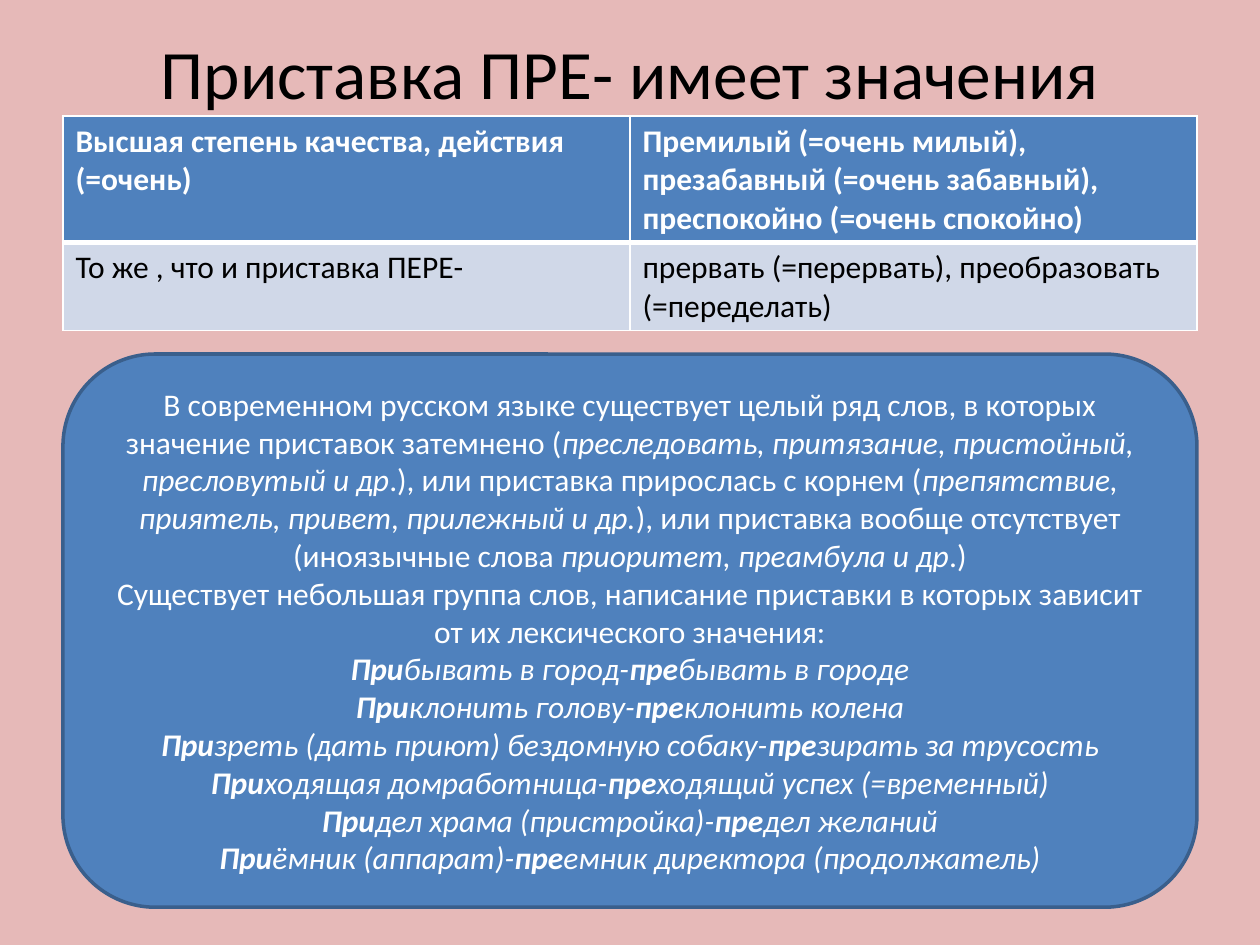
from dataclasses import dataclass

from lxml import etree
from pptx import Presentation
from pptx.dml.color import RGBColor
from pptx.enum.shapes import MSO_SHAPE
from pptx.enum.text import MSO_ANCHOR, PP_ALIGN
from pptx.oxml.ns import qn
from pptx.util import Inches, Pt

ROUNDED = MSO_SHAPE.ROUNDED_RECTANGLE
MIDDLE = MSO_ANCHOR.MIDDLE
CENTER = PP_ALIGN.CENTER


@dataclass(frozen=True)
class Theme:
    """Colours, font and type sizes of the slide."""
    background: str = "E6B9B8"
    accent: str = "4F81BD"
    accent_dark: str = "3A5F8C"
    band: str = "D0D8E8"
    light: str = "FFFFFF"
    dark: str = "000000"
    font: str = "Calibri"
    title_size: float = 39.6
    body_size: float = 18


THEME = Theme()

TITLE = "Приставка ПРЕ- имеет значения"
MEANINGS = [
    ("Высшая степень качества, действия (=очень)",
     "Премилый (=очень милый), презабавный (=очень забавный), "
     "преспокойно (=очень спокойно)"),
    ("То же , что и приставка ПЕРЕ-",
     "прервать (=перервать), преобразовать (=переделать)"),
]
OBSCURED_PREFIXES = [
    "В современном русском языке существует целый ряд слов, "
    "в которых значение приставок затемнено (",
    "преследовать, притязание, пристойный, пресловутый и др",
    ".), или приставка прирослась с корнем (",
    "препятствие, приятель, привет, прилежный и др.",
    "), или приставка вообще отсутствует (иноязычные слова ",
    "приоритет, преамбула и др",
    ".)",
]
PAIRS_INTRO = ("Существует небольшая группа слов, написание приставки "
               "в которых зависит от их лексического значения:")
WORD_PAIRS = [
    ("бывать в город-", "бывать в городе"),
    ("клонить голову-", "клонить колена"),
    ("зреть (дать приют) бездомную собаку-", "зирать за трусость"),
    ("ходящая домработница-", "ходящий успех (=временный)"),
    ("дел храма (пристройка)-", "дел желаний"),
    ("ёмник (аппарат)-", "емник директора (продолжатель)"),
]


def rgb(value):
    """Turn a hex string into a colour."""
    return RGBColor.from_string(value)


def style_run(run, size, color, bold=False, italic=False):
    """Apply the theme font and the given look to a run."""
    run.font.name = THEME.font
    run.font.size = Pt(size)
    run.font.color.rgb = rgb(color)
    run.font.bold = bold
    run.font.italic = italic


def set_border(cell, side, width):
    """Draw one light border of a cell."""
    border = etree.SubElement(cell._tc.get_or_add_tcPr(), qn(f"a:ln{side}"),
                              w=str(Pt(width)))
    fill = etree.SubElement(border, qn("a:solidFill"))
    etree.SubElement(fill, qn("a:srgbClr"), val=THEME.light)


def add_title(slide, left, top, width, height):
    """Place the centred slide title."""
    frame = slide.shapes.add_textbox(left, top, width, height).text_frame
    frame.word_wrap = True
    frame.vertical_anchor = MIDDLE
    frame.text = TITLE
    heading = frame.paragraphs[0]
    heading.alignment = CENTER
    style_run(heading.runs[0], THEME.title_size, THEME.dark)


def add_meanings(slide, left, top, width, height):
    """Place the table of prefix meanings, rows split by line count."""
    table = slide.shapes.add_table(len(MEANINGS), 2, left, top, width, height).table
    row_looks = [
        (0.59, THEME.accent, THEME.light, True, {"T": 1, "B": 3}),
        (0.41, THEME.band, THEME.dark, False, {"T": 3, "B": 1}),
    ]
    for row, texts, look in zip(table.rows, MEANINGS, row_looks):
        share, fill, color, bold, edges = look
        row.height = int(height * share)
        for cell, text in zip(row.cells, texts):
            for side, line_width in {"L": 1, "R": 1, **edges}.items():
                set_border(cell, side, line_width)
            cell.fill.solid()
            cell.fill.fore_color.rgb = rgb(fill)
            cell.text = text
            style_run(cell.text_frame.paragraphs[0].runs[0],
                      THEME.body_size, color, bold)


def add_explanation(slide, left, top, width, height):
    """Place the rounded panel with the rule and the word pairs."""
    panel = slide.shapes.add_shape(ROUNDED, left, top, width, height)
    panel.shadow.inherit = False
    panel.fill.solid()
    panel.fill.fore_color.rgb = rgb(THEME.accent)
    panel.line.color.rgb = rgb(THEME.accent_dark)
    panel.line.width = Pt(2)
    frame = panel.text_frame
    frame.word_wrap = True
    frame.vertical_anchor = MIDDLE

    lines = [
        [(text, False, i % 2 == 1) for i, text in enumerate(OBSCURED_PREFIXES)],
        [(PAIRS_INTRO, False, False)],
    ]
    lines += [
        [("При", True, True), (first, False, True),
         ("пре", True, True), (second, False, True)]
        for first, second in WORD_PAIRS
    ]
    for i, line in enumerate(lines):
        paragraph = frame.add_paragraph() if i else frame.paragraphs[0]
        paragraph.alignment = CENTER
        for text, bold, italic in line:
            run = paragraph.add_run()
            run.text = text
            style_run(run, THEME.body_size, THEME.light, bold, italic)


def main():
    """Build the slide and save it."""
    deck = Presentation()
    deck.slide_width, deck.slide_height = Inches(10), Inches(7.5)
    slide = deck.slides.add_slide(deck.slide_layouts[6])
    slide.background.fill.solid()
    slide.background.fill.fore_color.rgb = rgb(THEME.background)

    left, width = Inches(0.5), Inches(9)
    add_title(slide, left, Inches(0.3), width, Inches(0.54))
    add_meanings(slide, left, Inches(0.92), width, Inches(1.7))
    add_explanation(slide, left, Inches(2.81), width, Inches(4.39))
    deck.save("out.pptx")


if __name__ == "__main__":
    main()
